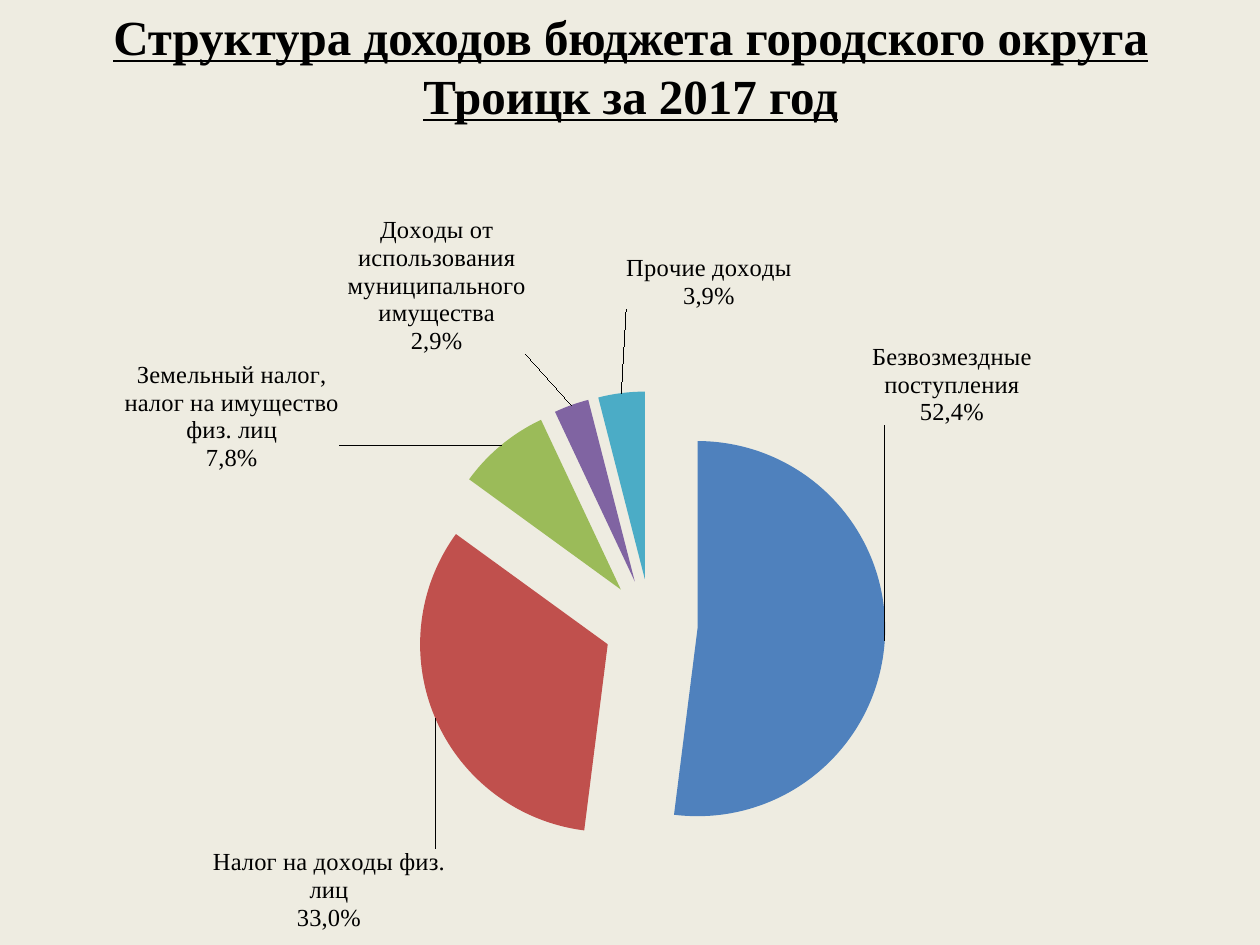
from lxml.etree import SubElement
from pptx import Presentation
from pptx.chart.data import CategoryChartData
from pptx.dml.color import RGBColor
from pptx.enum.chart import XL_CHART_TYPE, XL_LABEL_POSITION
from pptx.enum.text import MSO_ANCHOR, PP_ALIGN
from pptx.oxml.ns import qn
from pptx.util import Pt

FONT = "Times New Roman"
INCOME = [
    ("Безвозмездные поступления", "52,4%", 52, "4F81BD", (-11.5, -146.5)),
    ("Налог на доходы физ. лиц", "33,0%", 33, "C0504D", (9.5, 72.5)),
    ("Земельный налог, налог на имущество физ. лиц", "7,8%", 8, "9BBB59", (-90, 18.5)),
    ("Доходы от использования муниципального имущества", "2,9%", 3, "8064A2", (-24.5, -25)),
    ("Прочие доходы", "3,9%", 4, "4BACC6", (98, -43.5)),
]


def color(value):
    """Turn a hex string into a colour."""
    return RGBColor.from_string(value)


def style_font(font, size):
    """Apply the slide's typeface and black colour at a given size."""
    font.name, font.size = FONT, Pt(size)
    font.color.rgb = color("000000")


def add_layout(parent, position, **settings):
    """Insert a manual chart layout at a child position."""
    for old in parent.findall(qn("c:layout")):
        parent.remove(old)
    layout = SubElement(parent, qn("c:layout"))
    parent.insert(position, layout)
    manual = SubElement(layout, qn("c:manualLayout"))
    for name, value in settings.items():
        SubElement(manual, qn(f"c:{name}")).set("val", str(value))


def fill_title(title, left, top, width, height):
    """Place and format the slide title."""
    title.left, title.top, title.width, title.height = map(Pt, (left, top, width, height))
    frame = title.text_frame
    frame.text = "Структура доходов бюджета городского округа Троицк за 2017 год"
    frame.vertical_anchor = MSO_ANCHOR.MIDDLE
    para = frame.paragraphs[0]
    para.alignment = PP_ALIGN.CENTER
    style_font(para.font, 28)
    para.font.bold = para.font.underline = True


def format_slice(point, name, share, fill):
    """Colour a slice and write its category and share beside it."""
    point.format.fill.solid()
    point.format.fill.fore_color.rgb = color(fill)
    label = point.data_label
    frame = label.text_frame
    frame.text = f"{name}\n{share}"
    for para in frame.paragraphs:
        style_font(para.font, 14)
    label.position = XL_LABEL_POSITION.OUTSIDE_END


def add_income_pie(page, left, top, width, height):
    """Draw the exploded income pie with its labels and leader lines."""
    data = CategoryChartData(number_format="0")
    data.categories = [name for name, *rest in INCOME]
    data.add_series("Доходы", [value for name, share, value, *rest in INCOME])
    chart = page.shapes.add_chart(
        XL_CHART_TYPE.PIE, *map(Pt, (left, top, width, height)), data).chart
    chart.has_legend = chart.has_title = False
    style_font(chart.font, 11)
    plot = chart.plots[0]
    plot.vary_by_categories = True
    series = plot.series[0]
    node = series._element
    explosion = SubElement(node, qn("c:explosion"))
    explosion.set("val", "25")
    node.find(qn("c:tx")).addnext(explosion)
    for index, (name, share, value, fill, offset) in enumerate(INCOME):
        format_slice(series.points[index], name, share, fill)
    for label, (*rest, (across, down)) in zip(node.iter(qn("c:dLbl")), INCOME):
        add_layout(label, 1, x=across / width, y=down / height)
    area = node.getparent().getparent()
    add_layout(area, 0, layoutTarget="inner", xMode="edge", yMode="edge",
               x=142.5 / width, y=112 / height, w=453 / width, h=268 / height)


def main():
    """Build and save the slide."""
    deck = Presentation()
    deck.slide_width, deck.slide_height = Pt(720), Pt(540)
    page = deck.slides.add_slide(deck.slide_layouts[5])
    page.background.fill.solid()
    page.background.fill.fore_color.rgb = color("EEECE1")
    fill_title(page.shapes.title, 14.4, 3.6, 691.9, 67.7)
    add_income_pie(page, 2.9, 111.6, 697.7, 428.4)
    deck.save("out.pptx")


if __name__ == "__main__":
    main()
